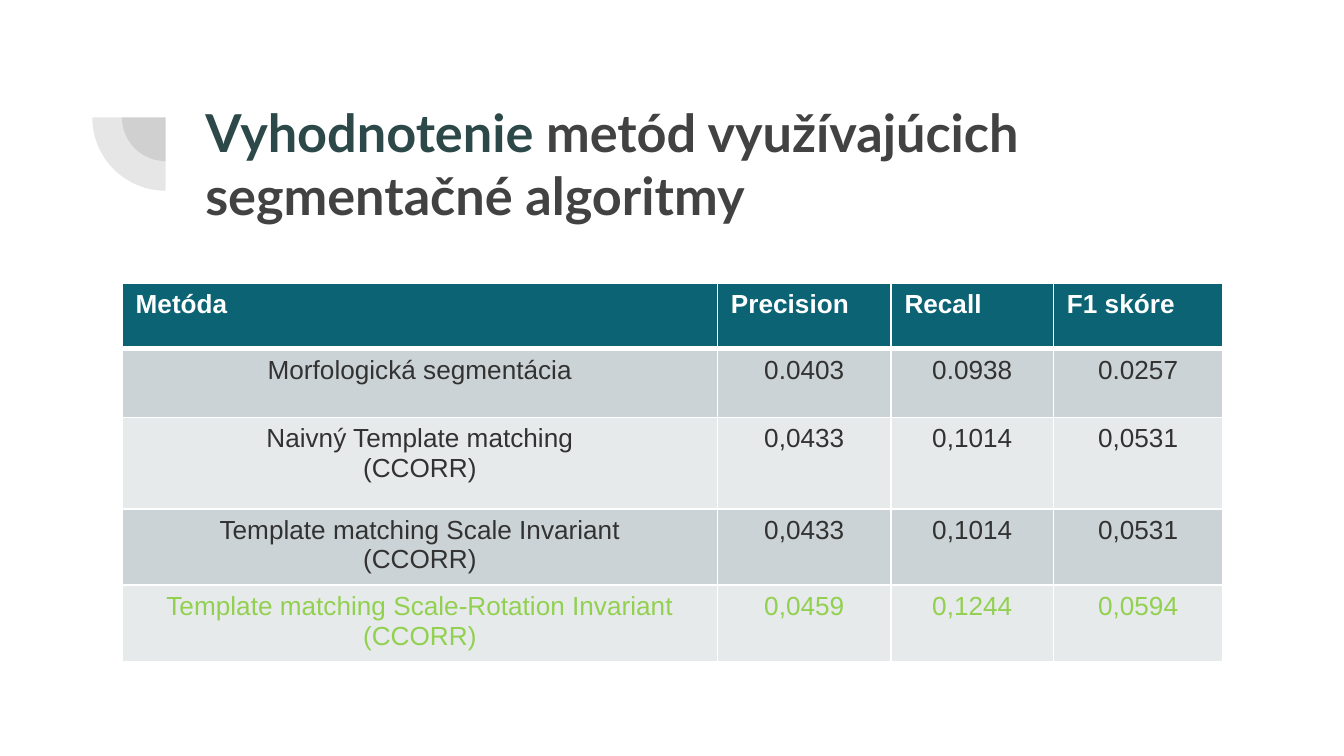
from dataclasses import dataclass

from lxml import etree
from pptx import Presentation
from pptx import util as u
from pptx.dml.color import RGBColor
from pptx.enum import shapes, text
from pptx.oxml.ns import qn


@dataclass(frozen=True)
class Theme:
    heading_font: str = "Lato"
    body_font: str = "Arial"
    heading_size: int = 28
    body_size: int = 14
    accent: str = "2C4848"
    dark: str = "424242"
    body: str = "323232"
    best: str = "92D050"
    white: str = "FFFFFF"
    header: str = "0B6374"
    bands: tuple = ("CCD3D6", "E7EAEB")
    opacity: int = 13


def add_span(para, content, *, font, size, color, bold=False):
    span = para.add_run()
    span.text = content
    span.font.name = font
    span.font.size = u.Pt(size)
    span.font.bold = bold
    span.font.color.rgb = RGBColor.from_string(color)


class SlideBuilder:
    def __init__(self, slide, theme):
        self.slide = slide
        self.theme = theme

    def quarter(self, center_x, center_y, size):
        pie = self.slide.shapes.add_shape(
            shapes.MSO_SHAPE.PIE, u.Cm(center_x - size / 2),
            u.Cm(center_y - size / 2), u.Cm(size), u.Cm(size))
        pie.adjustments[0] = 108
        pie.adjustments[1] = 162
        pie.rotation = 270
        pie.shadow.inherit = False
        pie.line.fill.background()
        pie.fill.solid()
        pie.fill.fore_color.rgb = RGBColor.from_string(self.theme.dark)
        color = pie.element.spPr.find(f"{qn('a:solidFill')}/{qn('a:srgbClr')}")
        etree.SubElement(color, qn("a:alpha"), val=str(self.theme.opacity * 1000))

    def title(self, left, top, width, height, parts):
        box = self.slide.shapes.add_textbox(
            u.Cm(left), u.Cm(top), u.Cm(width), u.Cm(height))
        frame = box.text_frame
        frame.word_wrap = True
        frame.margin_left = frame.margin_right = u.Cm(0.25)
        frame.margin_top = frame.margin_bottom = u.Cm(0.25)
        for content, color in parts:
            add_span(frame.paragraphs[0], content, font=self.theme.heading_font,
                     size=self.theme.heading_size, color=color, bold=True)

    def borders(self, cell, bottom):
        properties = cell._tc.get_or_add_tcPr()
        widths = {"a:lnL": 1, "a:lnR": 1, "a:lnT": 1, "a:lnB": bottom}
        for position, (side, width) in enumerate(widths.items()):
            line = etree.Element(qn(side), w=str(u.Pt(width)))
            fill = etree.SubElement(line, qn("a:solidFill"))
            etree.SubElement(fill, qn("a:srgbClr"), val=self.theme.white)
            properties.insert(position, line)

    def cell(self, cell, content, *, fill, color, header):
        cell.fill.solid()
        cell.fill.fore_color.rgb = RGBColor.from_string(fill)
        self.borders(cell, bottom=3 if header else 1)
        frame = cell.text_frame
        for index, line in enumerate(content.split("\n")):
            para = frame.add_paragraph() if index else frame.paragraphs[0]
            para.alignment = text.PP_ALIGN.LEFT if header else text.PP_ALIGN.CENTER
            add_span(para, line, font=self.theme.body_font,
                     size=self.theme.body_size, color=color, bold=header)

    def table(self, left, top, widths, heights, rows):
        table = self.slide.shapes.add_table(
            len(rows), len(widths), u.Cm(left), u.Cm(top),
            u.Cm(sum(widths)), u.Cm(sum(heights))).table
        for column, width in zip(table.columns, widths):
            column.width = u.Cm(width)
        for index, (row, height, values) in enumerate(zip(table.rows, heights, rows)):
            row.height = u.Cm(height)
            header = index == 0
            fill = self.theme.header if header else self.theme.bands[(index - 1) % 2]
            color = self.theme.body
            if header:
                color = self.theme.white
            elif index == len(rows) - 1:
                color = self.theme.best
            for cell, value in zip(row.cells, values):
                self.cell(cell, value, fill=fill, color=color, header=header)


def main():
    theme = Theme()
    deck = Presentation()
    deck.slide_width, deck.slide_height = u.Cm(25.4), u.Cm(14.29)
    page = SlideBuilder(deck.slides.add_slide(deck.slide_layouts[6]), theme)

    for size in (1.65, 2.77):
        page.quarter(3.13, 2.22, size)
    page.title(3.63, 1.65, 19.53, 2.77, [
        ("Vyhodnotenie", theme.accent),
        (" metód využívajúcich segmentačné algoritmy", theme.dark),
    ])
    page.table(2.31, 5.35, [11.25, 3.28, 3.07, 3.2], [1.24, 1.3, 1.73, 1.3, 1.3], [
        ("Metóda", "Precision", "Recall", "F1 skóre"),
        ("Morfologická segmentácia", "0.0403", "0.0938", "0.0257"),
        ("Naivný Template matching\n(CCORR)", "0,0433", "0,1014", "0,0531"),
        ("Template matching Scale Invariant\n(CCORR)", "0,0433", "0,1014", "0,0531"),
        ("Template matching Scale-Rotation Invariant\n(CCORR)",
         "0,0459", "0,1244", "0,0594"),
    ])
    deck.save("out.pptx")


if __name__ == "__main__":
    main()
